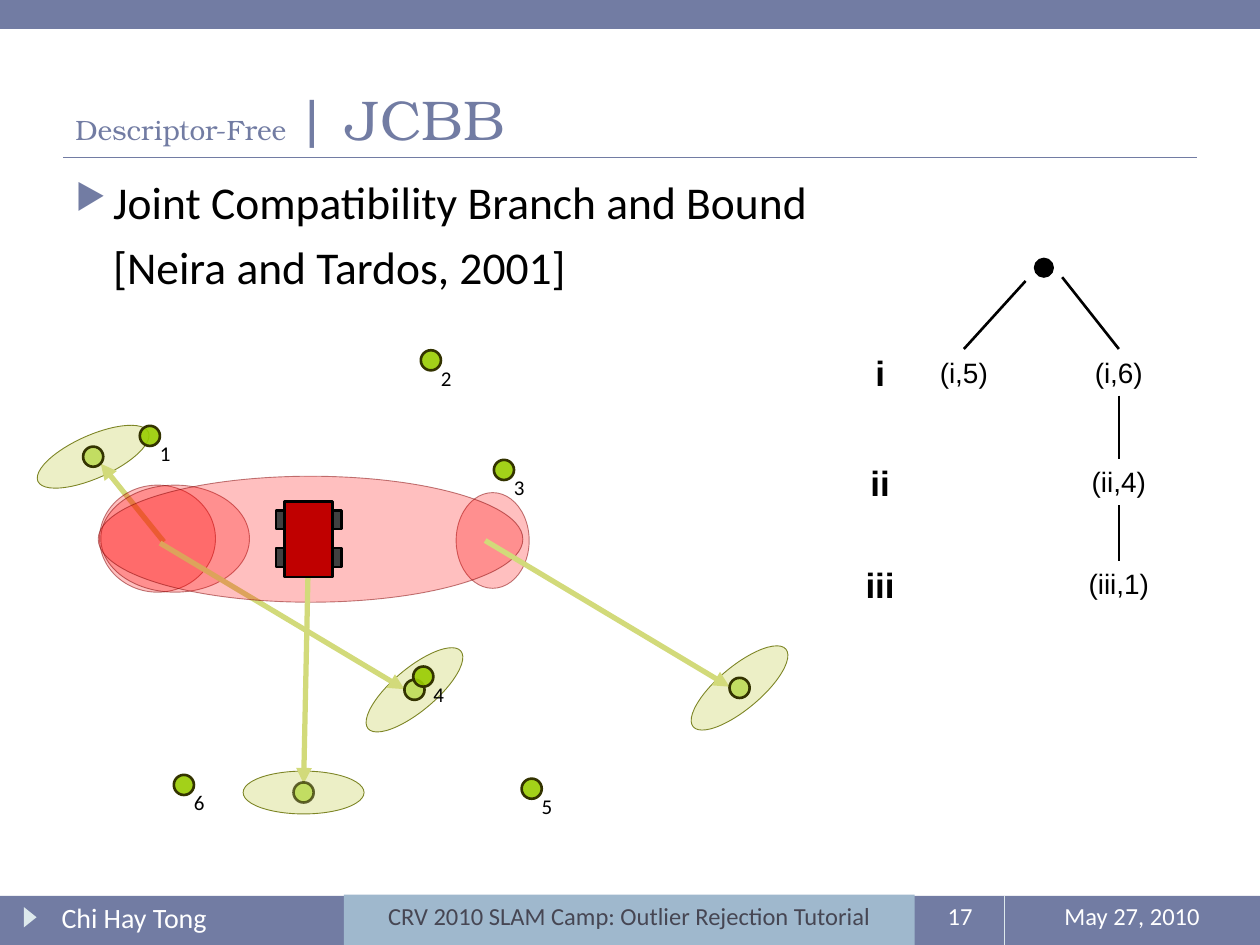
from dataclasses import dataclass

import pptx
import pptx.util
import pptx.dml.color
import pptx.enum.shapes
import pptx.enum.text
import pptx.oxml.ns
from lxml import etree

RGB = pptx.dml.color.RGBColor
SHAPE = pptx.enum.shapes.MSO_SHAPE
ALIGN = pptx.enum.text.PP_ALIGN
ANCHOR = pptx.enum.text.MSO_ANCHOR

SLATE = RGB(0x72, 0x7C, 0xA3)
MIST = RGB(0xDD, 0xE9, 0xEC)
SKY = RGB(0x9F, 0xB8, 0xCD)
CHARCOAL = RGB(0x46, 0x46, 0x53)
WHITE = RGB(0xFF, 0xFF, 0xFF)
BLACK = RGB(0, 0, 0)
PALE_OLIVE = RGB(0xE4, 0xE9, 0xAF)
OLIVE = RGB(0x7D, 0x85, 0x25)
ARROW = RGB(0xD2, 0xDA, 0x7A)
LIME = RGB(0x99, 0xCC, 0x00)
DARK_GREEN = RGB(0x33, 0x33, 0x00)
RED = RGB(0xFF, 0, 0)
MAROON = RGB(0x80, 0, 0)
ROBOT_RED = RGB(0xC0, 0, 0)
WHEEL_GRAY = RGB(0x40, 0x40, 0x40)

# Grid of 100 columns by 75 rows; every length below counts grid cells
COLUMNS, ROWS = 100, 75
CELL = pptx.util.Inches(0.1)


@dataclass
class Box:
    left: float
    top: float
    width: float
    height: float

    def inner(self, left, top, width, height):
        return Box(self.left + left, self.top + top, width, height)

    def around(self, x, y, width, height):
        return self.inner(x - width / 2, y - height / 2, width, height)

    def point(self, x, y):
        return self.left + x, self.top + y

    def emu(self):
        return [round(v * CELL) for v in (self.left, self.top, self.width, self.height)]


def add_element(parent, tag, **attributes):
    return etree.SubElement(parent, pptx.oxml.ns.qn(tag), attributes)


def set_alpha(shape, tag, percent):
    paint = shape._element.spPr.find(pptx.oxml.ns.qn(tag))
    for color in paint.iter(pptx.oxml.ns.qn("a:srgbClr")):
        add_element(color, "a:alpha", val=str(percent * 1000))


def add_shape(slide, box, kind, fill, line=None, weight=0.5, fill_alpha=100, line_alpha=100, angle=0):
    shape = slide.shapes.add_shape(kind, *box.emu())
    shape.shadow.inherit = False
    shape.rotation = angle
    shape.fill.solid()
    shape.fill.fore_color.rgb = fill
    if fill_alpha < 100:
        set_alpha(shape, "a:solidFill", fill_alpha)
    if line is None:
        shape.line.fill.background()
    else:
        shape.line.color.rgb = line
        shape.line.width = pptx.util.Pt(weight)
        if line_alpha < 100:
            set_alpha(shape, "a:ln", line_alpha)
    return shape


def add_line(slide, start, end, color, weight, arrow=False):
    ends = [round(v * CELL) for v in (*start, *end)]
    connector = slide.shapes.add_connector(pptx.enum.shapes.MSO_CONNECTOR.STRAIGHT, *ends)
    connector.line.color.rgb = color
    connector.line.width = pptx.util.Pt(weight)
    properties = connector._element.spPr
    if arrow:
        add_element(properties.find(pptx.oxml.ns.qn("a:ln")), "a:tailEnd", type="triangle")
    add_element(properties, "a:effectLst")
    return connector


def style(paragraph, size, color=BLACK, font="Calibri", bold=False):
    paragraph.font.size = pptx.util.Pt(size)
    paragraph.font.name = font
    paragraph.font.color.rgb = color
    paragraph.font.bold = bold


def add_text(slide, box, text, size, color=BLACK, font="Calibri", bold=False,
             align=ALIGN.CENTER, wrap=True):
    shape = slide.shapes.add_textbox(*box.emu())
    shape.text_frame.word_wrap = wrap
    paragraph = shape.text_frame.paragraphs[0]
    paragraph.text = text
    paragraph.alignment = align
    style(paragraph, size, color, font, bold)
    return shape


def draw_header(slide, box):
    add_shape(slide, box.inner(0, 0, box.width, 2.3), SHAPE.RECTANGLE, SLATE)
    add_line(slide, box.point(5, 12.5), box.point(95, 12.5), SLATE, 0.75)
    title = slide.shapes.add_textbox(*box.inner(5, 1.7, 90, 10.8).emu())
    title.text_frame.word_wrap = True
    title.text_frame.vertical_anchor = ANCHOR.BOTTOM
    paragraph = title.text_frame.paragraphs[0]
    for text, size in (("Descriptor-Free ", 16), ("| JCBB", 32)):
        run = paragraph.add_run()
        run.text = text
        run.font.size = pptx.util.Pt(size)
        run.font.name = "TeX Gyre Bonum"
        run.font.color.rgb = SLATE


def draw_body(slide, box):
    frame = slide.shapes.add_textbox(*box.emu()).text_frame
    frame.word_wrap = True
    topic = frame.paragraphs[0]
    reference = frame.add_paragraph()
    topic.text = "Joint Compatibility Branch and Bound"
    reference.text = "[Neira and Tardos, 2001]"
    reference.space_before = pptx.util.Pt(6)
    indent = 3 * CELL
    for paragraph, first_line in ((topic, -indent), (reference, 0)):
        properties = paragraph._p.get_or_add_pPr()
        properties.set("marL", str(indent))
        properties.set("indent", str(first_line))
        if first_line:
            add_element(add_element(properties, "a:buClr"), "a:srgbClr", val=str(SLATE))
            add_element(properties, "a:buSzPct", val="76000")
            add_element(properties, "a:buChar", char="▶")
        style(paragraph, 26)


def draw_footer(slide, box):
    add_shape(slide, box.inner(0, 0.1, box.width, 3.9), SHAPE.RECTANGLE, SLATE)
    add_shape(slide, box.inner(1.6, 1.3, 1.6, 1), SHAPE.ISOSCELES_TRIANGLE, MIST, angle=90)
    add_line(slide, box.point(79.7, 0.1), box.point(79.7, 4), MIST, 0.75)
    add_shape(slide, box.inner(27.3, 0, 45.3, 4), SHAPE.RECTANGLE, SKY)
    for left, width, text, size, color, align in (
            (3.9, 21.7, "Chi Hay Tong", 16, WHITE, ALIGN.LEFT),
            (27.3, 45.3, "CRV 2010 SLAM Camp: Outlier Rejection Tutorial", 14, CHARCOAL, ALIGN.CENTER),
            (72.7, 7, "17", 14, WHITE, ALIGN.CENTER),
            (79.7, 20.3, "May 27, 2010", 14, WHITE, ALIGN.CENTER)):
        add_text(slide, box.inner(left, 0, width, 4), text, size, color, align=align)


def draw_map(slide, box):
    def dot(x, y, alpha, line_alpha=100):
        add_shape(slide, box.around(x, y, 1.6, 1.6), SHAPE.OVAL, LIME, DARK_GREEN, 1.5, alpha, line_alpha)

    def measurement(x, y, angle, start, end, line_alpha=100):
        add_shape(slide, box.around(x, y, 9.6, 3.4), SHAPE.OVAL, PALE_OLIVE, OLIVE,
                  fill_alpha=70, angle=angle)
        add_line(slide, box.point(*start), box.point(*end), ARROW, 3, arrow=True)
        dot(x, y, 50, line_alpha)

    def uncertainty(*place):
        add_shape(slide, box.inner(*place), SHAPE.OVAL, RED, MAROON, fill_alpha=25, line_alpha=50)

    # Measurements interleaved with the robot position uncertainty
    measurement(5.4, 9.25, 336, (11, 16), (6, 9.8))
    uncertainty(5.9, 11.5, 9.2, 8.5)
    uncertainty(6, 11.5, 11.8, 8.5)
    measurement(30.9, 27.75, 320.1, (10.7, 16.1), (30.1, 27.7))
    uncertainty(34.2, 12.1, 5.8, 7.6)
    uncertainty(5.8, 10.8, 33.7, 10)
    measurement(56.7, 27.6, 320.1, (36.5, 15.9), (55.9, 27.5))

    # Numbered landmarks
    landmarks = ((9.9, 7.6), (32.2, 1.6), (38, 10.3), (31.6, 26.7), (40.2, 35.6), (12.6, 35.3))
    for number, (x, y) in enumerate(landmarks, 1):
        dot(x, y, 90)
        add_text(slide, box.inner(x - 0.2, y - 0.1, 2.9, 3), str(number), 12,
                 align=ALIGN.LEFT, wrap=False)

    # Robot with its own measurement
    measurement(22.1, 35.9, 0, (22.5, 15.9), (22.1, 35.2), line_alpha=75)
    add_shape(slide, box.around(22.5, 15.8, 3.8, 6), SHAPE.RECTANGLE, ROBOT_RED, BLACK, 1.5)
    for x in (20.25, 24.75):
        for y in (14.25, 17.25):
            add_shape(slide, box.around(x, y, 0.7, 1.5), SHAPE.RECTANGLE, WHEEL_GRAY, BLACK, 1.5)


def draw_tree(slide, box):
    tops = (7.2, 15.9, 24)

    def node(x, top, text):
        shape = add_text(slide, box.inner(x - 3.7, top, 7.4, 3.7), text, 16, font="Arial")
        shape.text_frame.margin_left = shape.text_frame.margin_right = 0
        return shape

    for top, level in zip(tops, ("i", "ii", "iii")):
        add_text(slide, box.inner(0, top - 0.3, 5.9, 4.4), level, 20, font="Arial", bold=True)
    leaf = node(9.6, tops[0], "(i,5)")
    branch = [node(21.9, top, text) for top, text in zip(tops, ("(i,6)", "(ii,4)", "(iii,1)"))]

    # Root and its two edges
    add_shape(slide, box.inner(15.2, 0, 1.5, 1.5), SHAPE.OVAL, BLACK, BLACK, 0.75)
    for start, child in (((14.5, 1.8), leaf), ((17.4, 1.5), branch[0])):
        edge = add_line(slide, box.point(*start), box.point(*start), BLACK, 1.5)
        edge.end_connect(child, 0)

    # Edges down the branch
    for parent, child in zip(branch, branch[1:]):
        edge = add_line(slide, box.point(0, 0), box.point(0, 0), BLACK, 1.5)
        edge.begin_connect(parent, 2)
        edge.end_connect(child, 0)


def main():
    presentation = pptx.Presentation()
    presentation.slide_width = COLUMNS * CELL
    presentation.slide_height = ROWS * CELL
    slide = presentation.slides.add_slide(presentation.slide_layouts[6])
    draw_header(slide, Box(0, 0, COLUMNS, 12.5))
    draw_body(slide, Box(5, 13.3, 90, 54))
    draw_footer(slide, Box(0, 71, COLUMNS, 4))
    draw_map(slide, Box(2, 27, 62, 39))
    draw_tree(slide, Box(66.9, 20.5, 26, 28))
    presentation.save("out.pptx")


if __name__ == "__main__":
    main()
